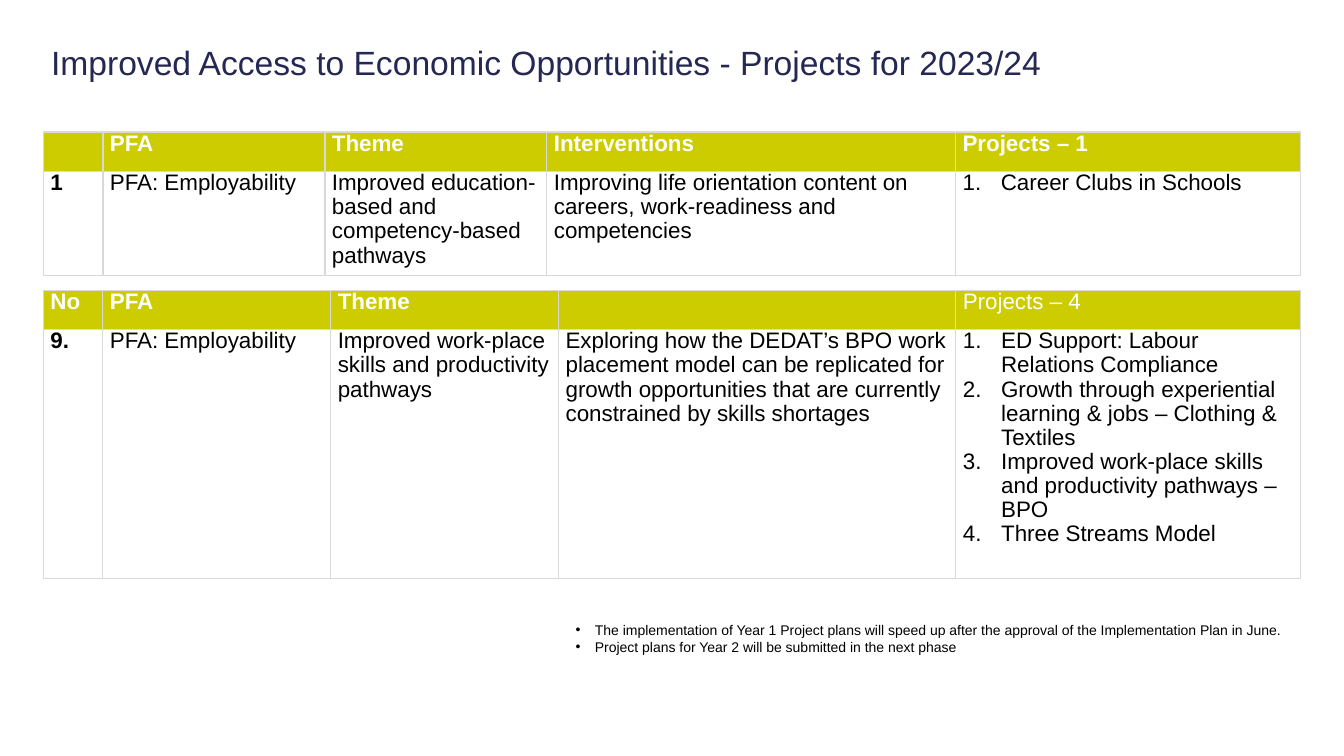
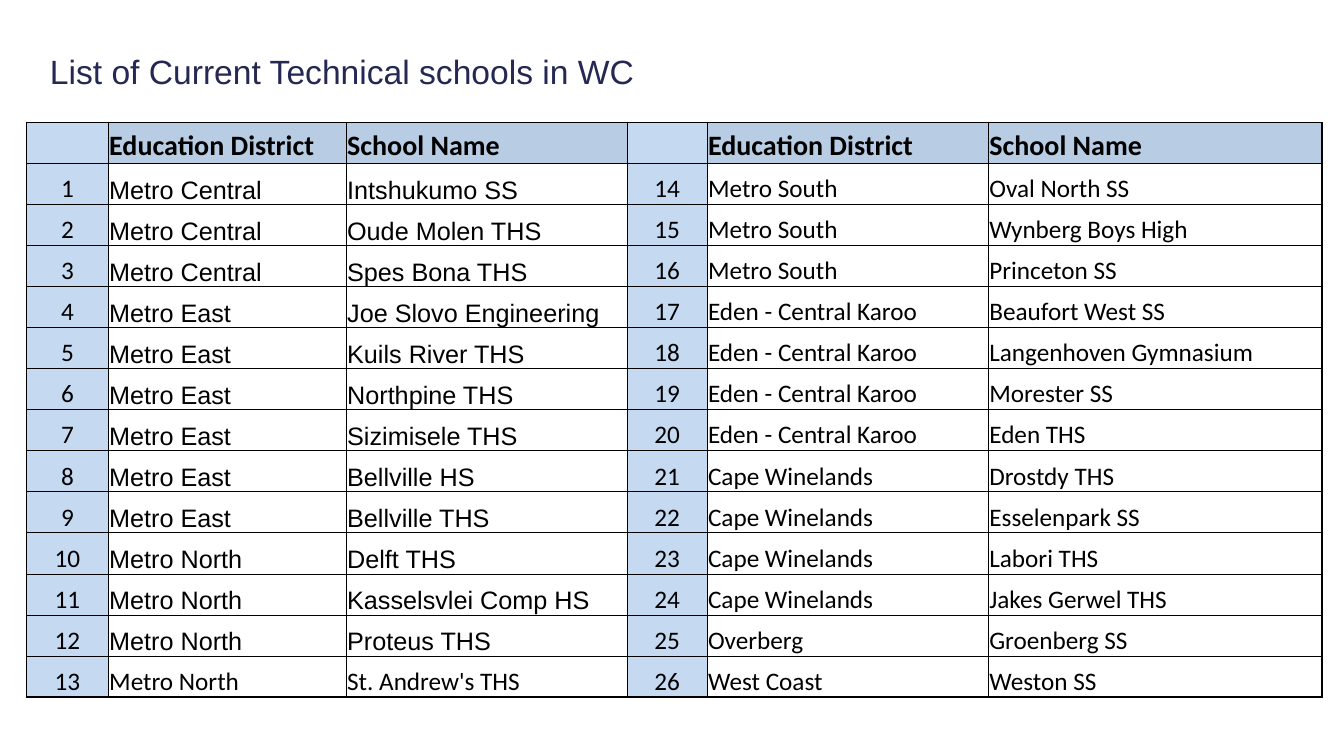
"""Builds two slides: the 2023/24 projects and the list of technical schools."""
import pptx
import pptx.dml.color
import pptx.enum.text
import pptx.oxml
import pptx.oxml.ns
import pptx.util
import lxml.etree

NAVY, LIME, GREY, WHITE, BLACK = "242852", "CCCC00", "D9D9D9", "FFFFFF", "000000"
PALE, STEEL = "C5D9F1", "B8CCE4"
ALIGN = pptx.enum.text.PP_ALIGN
ANCHOR = pptx.enum.text.MSO_ANCHOR
Inches = pptx.util.Inches
qn = pptx.oxml.ns.qn

prs = pptx.Presentation()
prs.slide_width, prs.slide_height = Inches(13.33), Inches(7.5)
W, H = prs.slide_width / 100, prs.slide_height / 100


def rgb(value):
    return pptx.dml.color.RGBColor.from_string(value)


def write(tf, text, size=16, color=BLACK, font="Arial", bold=False,
          align=ALIGN.LEFT, spacing=1.0, bullet=None, indent=0):
    for k, line in enumerate(text.split("\n")):
        p = tf.paragraphs[0] if k == 0 else tf.add_paragraph()
        p.alignment, p.line_spacing = align, spacing
        if bullet:
            pPr = p._p.get_or_add_pPr()
            pPr.set("marL", str(Inches(indent)))
            pPr.set("indent", str(-Inches(indent)))
            if bullet == "1.":
                lxml.etree.SubElement(pPr, qn("a:buAutoNum"), type="arabicPeriod")
            else:
                lxml.etree.SubElement(pPr, qn("a:buFont"), typeface="Arial")
                lxml.etree.SubElement(pPr, qn("a:buChar"), char=bullet)
        if line:
            r = p.add_run()
            r.text = line
            r.font.size, r.font.name = pptx.util.Pt(size), font
            r.font.bold, r.font.color.rgb = bold, rgb(color)


slides = [prs.slides.add_slide(prs.slide_layouts[6]) for _ in range(2)]

title = dict(size=24, color=NAVY)
notes = dict(size=10, bullet="•", indent=0.19)
boxes = [
    (0, (3.2, 4.1, 94, 8.2), 0.08, title,
     "Improved Access to Economic Opportunities - Projects for 2023/24"),
    (1, (3.12, 5.3, 94, 8.2), 0.08, title, "List of Current Technical schools in WC"),
    (0, (42.1, 81.5, 55.5, 5.9), 0.1, notes,
     "The implementation of Year 1 Project plans will speed up after the approval of "
     "the Implementation Plan in June.\n"
     "Project plans for Year 2 will be submitted in the next phase"),
]
for n, (x, y, w, h), inset, style, text in boxes:
    sp = slides[n].shapes.add_textbox(int(x * W), int(y * H), int(w * W), int(h * H))
    tf = sp.text_frame
    tf.word_wrap, tf.vertical_anchor = True, ANCHOR.MIDDLE
    tf.margin_left = tf.margin_right = Inches(inset)
    tf.margin_top = tf.margin_bottom = Inches(0.05)
    write(tf, text, **style)

projects = [
    (17.45, 18.5, [0.59, 2.2, 2.2, 4.05, 3.42], [0.39, 0.99], [
        ["", "PFA", "Theme", "Interventions", "Projects – 1"],
        ["1", "PFA: Employability",
         "Improved education-based and competency-based pathways",
         "Improving life orientation content on careers, work-readiness and competencies",
         "Career Clubs in Schools"]]),
    (38.4, 38.1, [0.59, 2.26, 2.26, 3.94, 3.42], [0.39, 2.47], [
        ["No", "PFA", "Theme", "", "Projects – 4"],
        ["9.", "PFA: Employability",
         "Improved work-place skills and productivity pathways",
         "Exploring how the DEDAT’s BPO work placement model can be replicated for growth "
         "opportunities that are currently constrained by skills shortages",
         "ED Support: Labour Relations Compliance\n"
         "Growth through experiential learning & jobs – Clothing & Textiles\n"
         "Improved work-place skills and productivity pathways – BPO\n"
         "Three Streams Model"]]),
]
schools = [
    ("Metro Central", ["Intshukumo SS", "Oude Molen THS", "Spes Bona THS"]),
    ("Metro East", ["Joe Slovo Engineering", "Kuils River THS", "Northpine THS",
                    "Sizimisele THS", "Bellville HS", "Bellville THS"]),
    ("Metro North", ["Delft THS", "Kasselsvlei Comp HS", "Proteus THS", "St. Andrew's THS"]),
    ("Metro South", ["Oval North SS", "Wynberg Boys High", "Princeton SS"]),
    ("Eden - Central Karoo", ["Beaufort West SS", "Langenhoven Gymnasium", "Morester SS",
                              "Eden THS"]),
    ("Cape Winelands", ["Drostdy THS", "Esselenpark SS", "Labori THS", "Jakes Gerwel THS"]),
    ("Overberg", ["Groenberg SS"]),
    ("West Coast", ["Weston SS"]),
]

tables = []
for y, h, cols, heights, rows in projects:
    cells = []
    for i, row in enumerate(rows):
        cells.append([])
        for j, text in enumerate(row):
            style = dict(color=BLACK if i else WHITE, spacing=0.97,
                         bold=text != "Projects – 4" and (i == 0 or j == 0))
            if i and j == 4:
                style.update(bullet="1.", indent=0.38)
            cells[i].append((text, None if i else LIME, style))
    look = dict(line=GREY, inner=1, outer=1, anchor=ANCHOR.TOP, insets=(0.07, 0))
    tables.append((0, (3.23, y, 93.55, h), cols, heights, cells, look))

names = [(district, name) for district, group in schools for name in group]
half = len(names) // 2
heads = ["", "Education District", "School Name"] * 2
cells = [[(t, STEEL if t else PALE, dict(size=20, font="Calibri", bold=True)) for t in heads]]
for i in range(half):
    row = []
    for k in (i, i + half):
        font = "Arial" if k < half - 1 else "Calibri"
        row.append((str(k + 1), PALE, dict(size=18, font="Calibri", align=ALIGN.CENTER)))
        row += [(t, None, dict(size=18, font=font)) for t in names[k]]
    cells.append(row)
look = dict(line=BLACK, inner=0.5, outer=1, anchor=ANCHOR.BOTTOM, insets=(0.01, 0.01))
tables.append((1, (1.98, 16.2, 96.4, 76), [0.81, 2.36, 2.79, 0.79, 2.79, 3.31],
               [1] * len(cells), cells, look))

for n, (x, y, w, h), cols, heights, cells, look in tables:
    frame = slides[n].shapes.add_table(len(heights), len(cols), int(x * W), int(y * H),
                                       int(w * W), int(h * H))
    table = frame.table
    table.first_row = table.horz_banding = False
    for j, share in enumerate(cols):
        table.columns[j].width = int(w * W * share / sum(cols))
    for i, share in enumerate(heights):
        table.rows[i].height = int(h * H * share / sum(heights))
    for i, row in enumerate(cells):
        for j, (text, fill, style) in enumerate(row):
            cell = table.cell(i, j)
            cell.margin_left = cell.margin_right = Inches(look["insets"][0])
            cell.margin_top, cell.margin_bottom = Inches(look["insets"][1]), 0
            cell.vertical_anchor = look["anchor"]
            if fill:
                cell.fill.solid()
                cell.fill.fore_color.rgb = rgb(fill)
            else:
                cell.fill.background()
            write(cell.text_frame, text, **style)
            edges = [("L", j == 0), ("R", j == len(cols) - 1),
                     ("T", i == 0), ("B", i == len(heights) - 1)]
            for k, (side, at_edge) in enumerate(edges):
                width = pptx.util.Pt(look["outer" if at_edge else "inner"])
                ln = lxml.etree.Element(qn("a:ln" + side), w=str(width))
                solid = lxml.etree.SubElement(ln, qn("a:solidFill"))
                lxml.etree.SubElement(solid, qn("a:srgbClr"), val=look["line"])
                cell._tc.get_or_add_tcPr().insert(k, ln)

prs.save("out.pptx")
